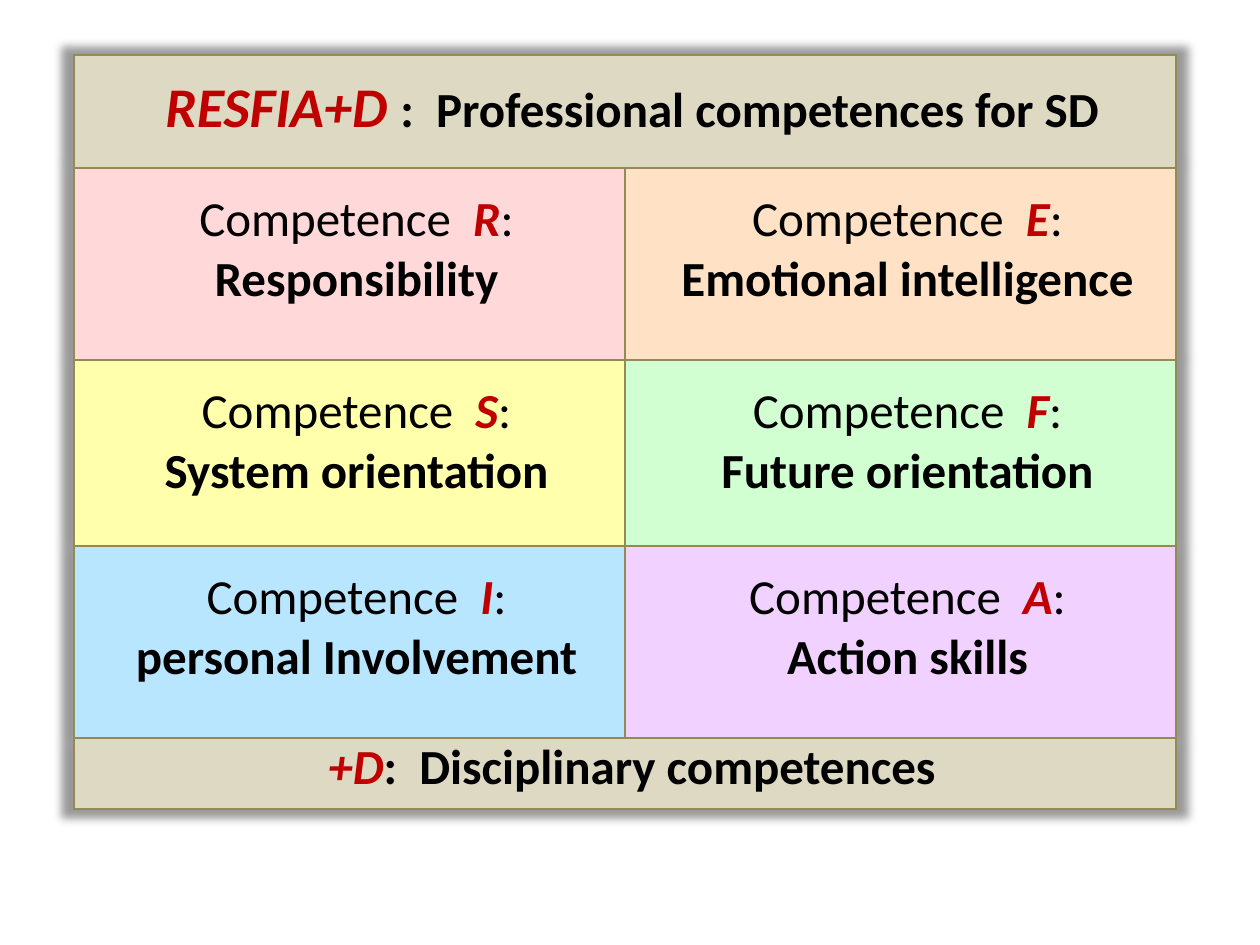
from dataclasses import dataclass

from lxml.etree import SubElement
from pptx import Presentation
from pptx.dml.color import RGBColor
from pptx.enum.text import MSO_ANCHOR, PP_ALIGN
from pptx.oxml import parse_xml
from pptx.oxml.ns import nsdecls, qn
from pptx.util import Emu, Pt

SCALE = 914400 // 126


@dataclass(frozen=True)
class Theme:
    font: str = "Calibri"
    title_size: int = 32
    body_size: int = 28
    text: str = "000000"
    accent: str = "C00000"
    band: str = "DDD9C3"
    border: str = "948A54"
    border_width: int = 1


THEME = Theme()
LEFT, TOP = 74, 55
COLUMN_WIDTH = 551
ROW_HEIGHTS = (113, 192, 186, 192, 71)
CELL_LEFT_INSET = 14
TITLE_INSET = 19
COMPETENCE_INSET = 22
COMPETENCES = (
    ("R", "Responsibility", "FFD9D9"),
    ("E", "Emotional intelligence", "FFE2C5"),
    ("S", "System orientation", "FFFFAC"),
    ("F", "Future orientation", "D1FFD1"),
    ("I", "personal Involvement", "B9E6FF"),
    ("A", "Action skills", "F0D1FF"),
)


def px(value):
    return Emu(value * SCALE)


def add_text(paragraph, text, size=THEME.body_size, color=THEME.text, bold=True, italic=False):
    run = paragraph.add_run()
    run.text = text
    font = run.font
    font.name = THEME.font
    font.size = Pt(size)
    font.bold = bold
    font.italic = italic
    font.color.rgb = RGBColor.from_string(color)


def add_accent(paragraph, text, size=THEME.body_size):
    add_text(paragraph, text, size=size, color=THEME.accent, italic=True)


def add_borders(cell):
    properties = cell._tc.get_or_add_tcPr()
    for index, side in enumerate(("lnL", "lnR", "lnT", "lnB")):
        line = SubElement(properties, qn(f"a:{side}"), w=str(Pt(THEME.border_width)))
        fill = SubElement(line, qn("a:solidFill"))
        SubElement(fill, qn("a:srgbClr"), val=THEME.border)
        properties.insert(index, line)


def format_cell(cell, color, top_inset=0):
    cell.fill.solid()
    cell.fill.fore_color.rgb = RGBColor.from_string(color)
    cell.margin_left = px(CELL_LEFT_INSET)
    cell.margin_top = px(top_inset)
    cell.margin_right = cell.margin_bottom = 0
    cell.vertical_anchor = MSO_ANCHOR.TOP
    add_borders(cell)
    paragraph = cell.text_frame.paragraphs[0]
    paragraph.alignment = PP_ALIGN.CENTER
    return paragraph


def add_band(table, row, top_inset=0):
    first, last = table.cell(row, 0), table.cell(row, 1)
    first.merge(last)
    format_cell(last, THEME.band)
    return format_cell(first, THEME.band, top_inset)


def add_competence(cell, letter, name, color):
    heading = format_cell(cell, color, COMPETENCE_INSET)
    add_text(heading, "Competence  ", bold=False)
    add_accent(heading, letter)
    add_text(heading, ":", bold=False)
    paragraph = cell.text_frame.add_paragraph()
    paragraph.alignment = PP_ALIGN.CENTER
    add_text(paragraph, name)


def add_shadow(table):
    effect = parse_xml(
        f'<a:effectLst {nsdecls("a")}>'
        '<a:outerShdw blurRad="63500" sx="102000" sy="102000" algn="ctr" rotWithShape="0">'
        '<a:prstClr val="black"><a:alpha val="40000"/></a:prstClr>'
        "</a:outerShdw></a:effectLst>"
    )
    table._tbl.tblPr.insert(0, effect)


def add_grid(slide):
    frame = slide.shapes.add_table(
        len(ROW_HEIGHTS), 2, px(LEFT), px(TOP), px(2 * COLUMN_WIDTH), px(sum(ROW_HEIGHTS))
    )
    table = frame.table
    table.first_row = table.horz_banding = False
    for column in table.columns:
        column.width = px(COLUMN_WIDTH)
    for row, height in zip(table.rows, ROW_HEIGHTS):
        row.height = px(height)
    add_shadow(table)
    return table


def main():
    presentation = Presentation()
    presentation.slide_width, presentation.slide_height = px(1260), px(945)
    slide = presentation.slides.add_slide(presentation.slide_layouts[6])
    table = add_grid(slide)

    title = add_band(table, 0, TITLE_INSET)
    add_accent(title, "RESFIA+D ", size=THEME.title_size)
    add_text(title, ":  Professional competences for SD")

    for index, competence in enumerate(COMPETENCES):
        row, column = divmod(index, 2)
        add_competence(table.cell(row + 1, column), *competence)

    footer = add_band(table, len(ROW_HEIGHTS) - 1)
    add_accent(footer, "+D")
    add_text(footer, ":  Disciplinary competences")

    presentation.save("out.pptx")


if __name__ == "__main__":
    main()
